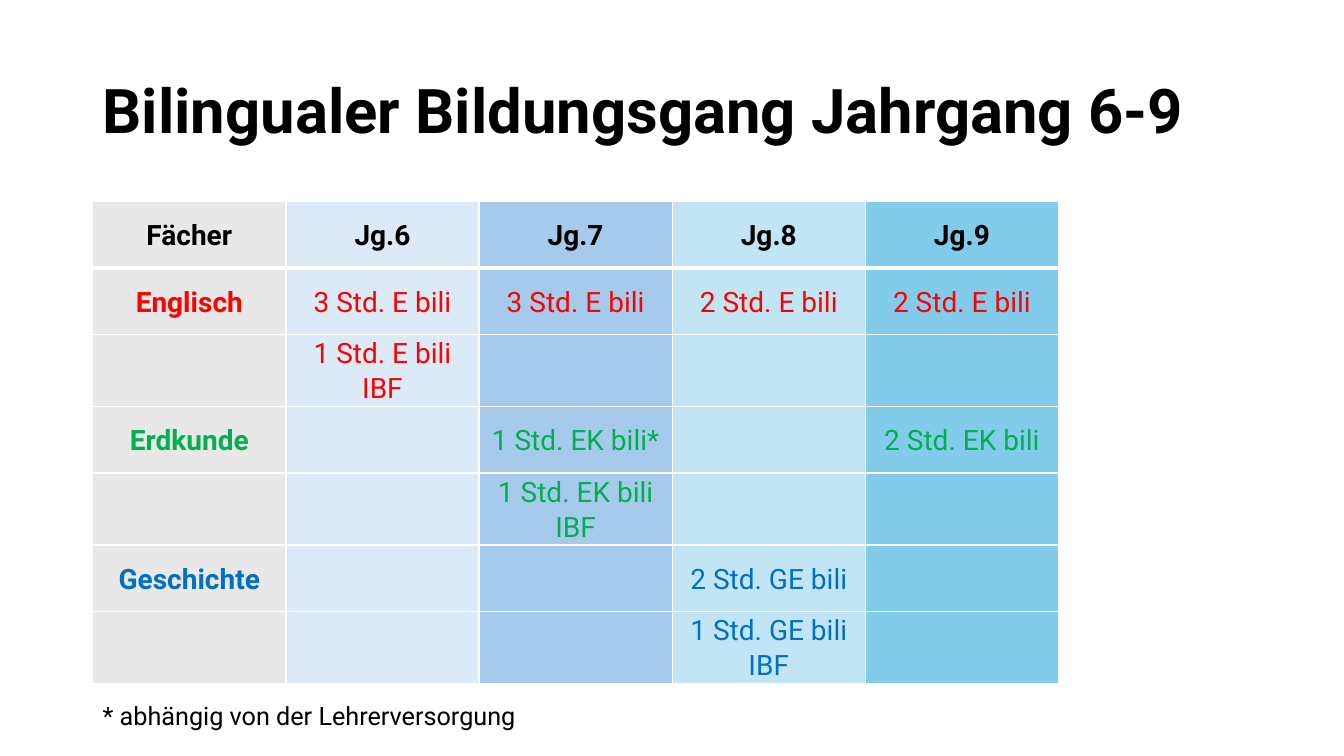
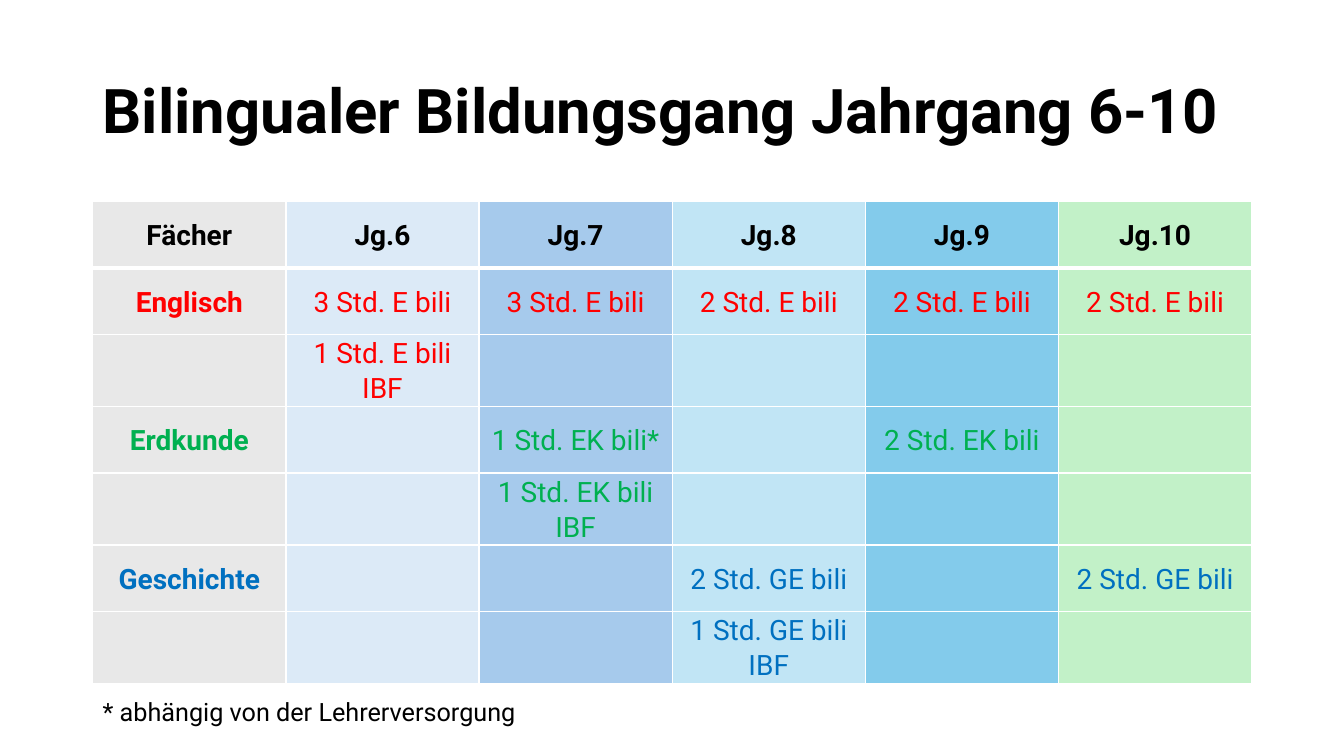
from lxml.etree import SubElement
from pptx import Presentation
from pptx.dml.color import RGBColor
from pptx.enum.text import MSO_ANCHOR, MSO_AUTO_SIZE, PP_ALIGN
from pptx.oxml.ns import qn
from pptx.util import Inches, Pt

FONT = "Roboto"
BLACK, WHITE, GREY = "000000", "FFFFFF", "E8E8E8"
RED, GREEN, BLUE = "FF0000", "00B050", "0070C0"
LEFT, WIDE, TALL = 0.92, 1.916, 0.66

# Column heads with their fills
HEADS = [("Fächer", GREY), ("Jg.6", "DCEAF7"), ("Jg.7", "A6CAEC"),
         ("Jg.8", "C1E5F5"), ("Jg.9", "83CBEB"), ("Jg.10", "C2F1C8")]

# Text colour, then the cells from left to right
ROWS = [
    (RED, ["Englisch", "3 Std. E bili", "3 Std. E bili",
           "2 Std. E bili", "2 Std. E bili", "2 Std. E bili"]),
    (RED, ["", "1 Std. E bili IBF", "", "", "", ""]),
    (GREEN, ["Erdkunde", "", "1 Std. EK bili*", "", "2 Std. EK bili", ""]),
    (GREEN, ["", "", "1 Std. EK bili IBF", "", "", ""]),
    (BLUE, ["Geschichte", "", "", "2 Std. GE bili", "", "2 Std. GE bili"]),
    (BLUE, ["", "", "", "1 Std. GE bili IBF", "", ""]),
]


def color(code):
    return RGBColor.from_string(code)


class Deck:
    def __init__(self):
        self.prs = Presentation()
        self.prs.slide_width = Inches(13.33)
        self.prs.slide_height = Inches(7.5)
        self.slide = None

    def page(self):
        self.slide = self.prs.slides.add_slide(self.prs.slide_layouts[6])

    def run(self, para, text, size, ink=BLACK, bold=False):
        run = para.add_run()
        run.text = text
        font = run.font
        font.name, font.size, font.bold = FONT, Pt(size), bold
        font.color.rgb = color(ink)

    def box(self, left, top, width, height):
        box = self.slide.shapes.add_textbox(
            Inches(left), Inches(top), Inches(width), Inches(height))
        box.text_frame.word_wrap = True
        return box.text_frame

    def title(self, text):
        frame = self.box(LEFT, 0.4, 11.5, 1.45)
        frame.vertical_anchor = MSO_ANCHOR.MIDDLE
        para = frame.paragraphs[0]
        para.line_spacing = 0.9
        self.run(para, text, 44, bold=True)

    def note(self, text, top):
        frame = self.box(LEFT, top, 6.66, 0.4)
        frame.auto_size = MSO_AUTO_SIZE.SHAPE_TO_FIT_TEXT
        self.run(frame.paragraphs[0], text, 18)

    def edge(self, cell, side, width):
        props = cell._tc.get_or_add_tcPr()
        line = SubElement(props, qn(f"a:ln{side}"), w=str(Pt(width)))
        fill = SubElement(line, qn("a:solidFill"))
        SubElement(fill, qn("a:srgbClr"), val=WHITE)

    def cell(self, cell, text, fill, ink, bold, top, base):
        for side, width in (("L", 1), ("R", 1), ("T", top), ("B", base)):
            self.edge(cell, side, width)
        cell.fill.solid()
        cell.fill.fore_color.rgb = color(fill)
        cell.vertical_anchor = MSO_ANCHOR.MIDDLE
        cell.margin_left = cell.margin_right = Inches(0.07)
        cell.margin_top = cell.margin_bottom = 0
        if text:
            para = cell.text_frame.paragraphs[0]
            para.alignment = PP_ALIGN.CENTER
            para.line_spacing = 1.07
            para.space_before = para.space_after = Pt(6)
            self.run(para, text, 20, ink, bold)

    def table(self, heads, rows):
        lines = [(BLACK, [name for name, _ in heads])] + rows
        count = len(heads)
        table = self.slide.shapes.add_table(
            len(lines), count, Inches(LEFT), Inches(2),
            Inches(WIDE * count), Inches(TALL * len(lines))).table
        table.first_row = table.horz_banding = False
        for col in table.columns:
            col.width = Inches(WIDE)
        for r, (ink, texts) in enumerate(lines):
            table.rows[r].height = Inches(TALL)
            # A thick rule parts the head from the body
            top, base = 3 if r == 1 else 1, 3 if r == 0 else 1
            for c, (_, fill) in enumerate(heads):
                self.cell(table.cell(r, c), texts[c], fill, ink,
                          r == 0 or c == 0, top, base)


def main():
    deck = Deck()
    # One slide for each last year
    for last, top in ((9, 6.9), (10, 6.86)):
        deck.page()
        deck.title(f"Bilingualer Bildungsgang Jahrgang 6-{last}")
        deck.table(HEADS[:last - 4], ROWS)
        deck.note("* abhängig von der Lehrerversorgung", top)
    deck.prs.save("out.pptx")


if __name__ == "__main__":
    main()
